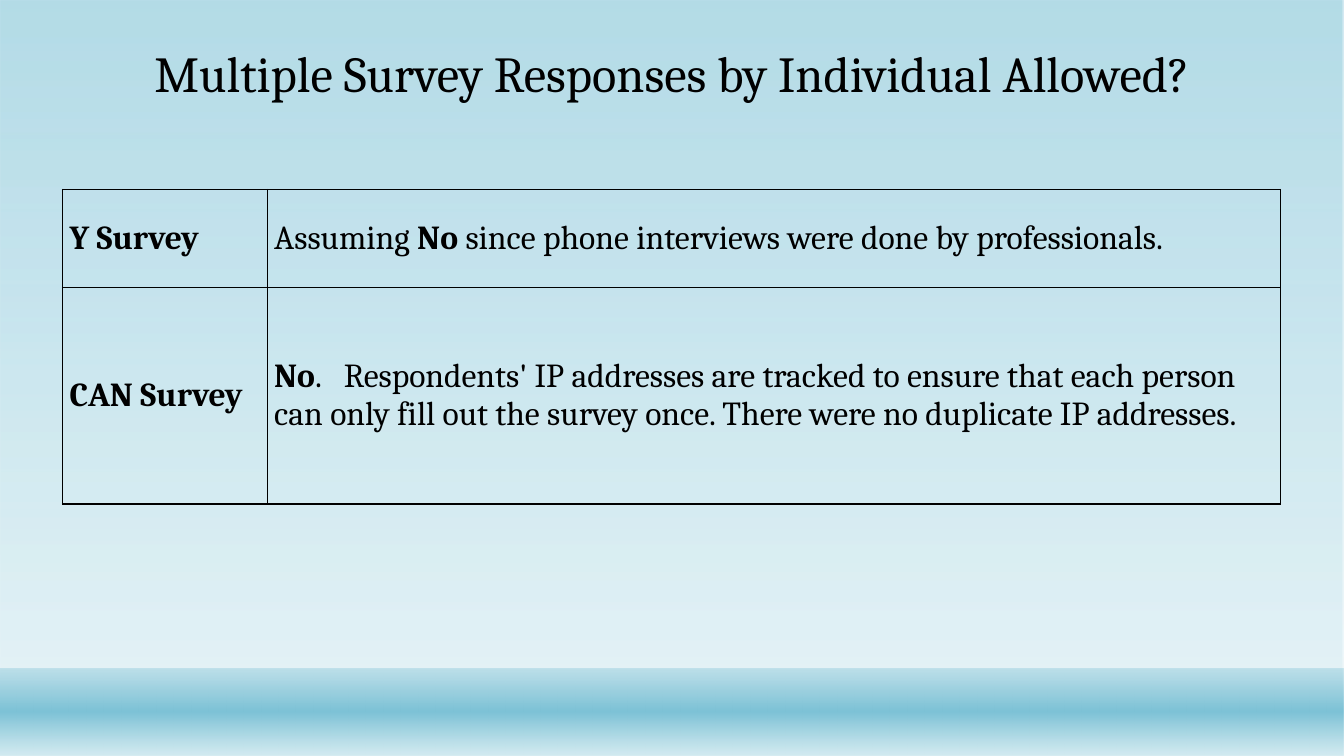
import pptx
import pptx.dml.color
import pptx.enum.shapes
import pptx.enum.text
import pptx.oxml
import pptx.oxml.ns
import pptx.util
from pptx.util import Inches

BLACK = pptx.dml.color.RGBColor(0x00, 0x00, 0x00)
TEAL = pptx.dml.color.RGBColor(0x7D, 0xC2, 0xD6)
PALE = pptx.dml.color.RGBColor(0xD4, 0xEB, 0xF1)
FONT = "Cambria"
NAMESPACE = pptx.oxml.ns.nsdecls("a")


def add_gradient_band(top, height, stops):
    """Add a full-width band shaded downwards; stops are (position %, colour, opacity %)."""
    band = slide.shapes.add_shape(
        pptx.enum.shapes.MSO_SHAPE.RECTANGLE, 0, Inches(top), presentation.slide_width, Inches(height))
    band.shadow.inherit = False
    band.line.fill.background()
    stop_xml = "".join(
        f'<a:gs pos="{position * 1000}"><a:srgbClr val="{color}">'
        f'<a:alpha val="{opacity * 1000}"/></a:srgbClr></a:gs>'
        for position, color, opacity in stops)
    gradient = pptx.oxml.parse_xml(
        f'<a:gradFill {NAMESPACE} rotWithShape="1"><a:gsLst>{stop_xml}</a:gsLst>'
        '<a:lin ang="5400000" scaled="0"/></a:gradFill>')
    band._element.spPr.find(pptx.oxml.ns.qn("a:prstGeom")).addnext(gradient)


def style_font(font, size):
    font.name = FONT
    font.size = pptx.util.Pt(size)
    font.color.rgb = BLACK


presentation = pptx.Presentation()
presentation.slide_width = Inches(13.33)
presentation.slide_height = Inches(7.5)
slide = presentation.slides.add_slide(presentation.slide_layouts[6])

# Background bands
add_gradient_band(0, 7.5, [(0, TEAL, 58), (88, PALE, 65)])
add_gradient_band(6.63, 0.87, [(1, TEAL, 38), (49, TEAL, 100), (100, PALE, 89)])

# Survey table: each cell is a list of (text, bold) runs
rows = [
    [[("Y Survey", True)],
     [("Assuming ", False), ("No", True),
      (" since phone interviews were done by professionals.", False)]],
    [[("CAN Survey", True)],
     [("No", True),
      (".\tRespondents' IP addresses are tracked to ensure that each person can only "
       "fill out the survey once. There were no duplicate IP addresses.", False)]],
]
table = slide.shapes.add_table(2, 2, Inches(0.62), Inches(1.88), Inches(12.08), Inches(3.12)).table
table.first_row = False
table.horz_banding = False
for column, width in zip(table.columns, (2.03, 10.05)):
    column.width = Inches(width)
for row, height in zip(table.rows, (0.97, 2.15)):
    row.height = Inches(height)

for row, row_runs in zip(table.rows, rows):
    for cell, runs in zip(row.cells, row_runs):
        cell.margin_left = cell.margin_right = Inches(0.07)
        cell.margin_top = cell.margin_bottom = 0
        cell.vertical_anchor = pptx.enum.text.MSO_ANCHOR.MIDDLE
        paragraph = cell.text_frame.paragraphs[0]
        if any("\t" in text for text, bold in runs):
            paragraph._p.get_or_add_pPr().append(pptx.oxml.parse_xml(
                f'<a:tabLst {NAMESPACE}><a:tab pos="{Inches(0.69)}" algn="l"/></a:tabLst>'))
        style_font(paragraph.font, 24)
        for text, bold in runs:
            run = paragraph.add_run()
            run.text = text
            run.font.bold = bold
        # Cell borders come before the fill in the cell properties
        for side in ("lnL", "lnR", "lnT", "lnB"):
            cell._tc.get_or_add_tcPr().append(pptx.oxml.parse_xml(
                f'<a:{side} {NAMESPACE} w="{pptx.util.Pt(1)}"><a:solidFill>'
                f'<a:srgbClr val="{BLACK}"/></a:solidFill></a:{side}>'))
        cell.fill.background()

# Title
title = slide.shapes.add_textbox(Inches(0.87), Inches(0.41), Inches(11.59), Inches(0.67))
title.text_frame.word_wrap = True
title.text_frame.vertical_anchor = pptx.enum.text.MSO_ANCHOR.BOTTOM
paragraph = title.text_frame.paragraphs[0]
paragraph.text = "Multiple Survey Responses by Individual Allowed?"
paragraph.alignment = pptx.enum.text.PP_ALIGN.CENTER
paragraph.line_spacing = 0.9
style_font(paragraph.font, 36)

presentation.save("out.pptx")
